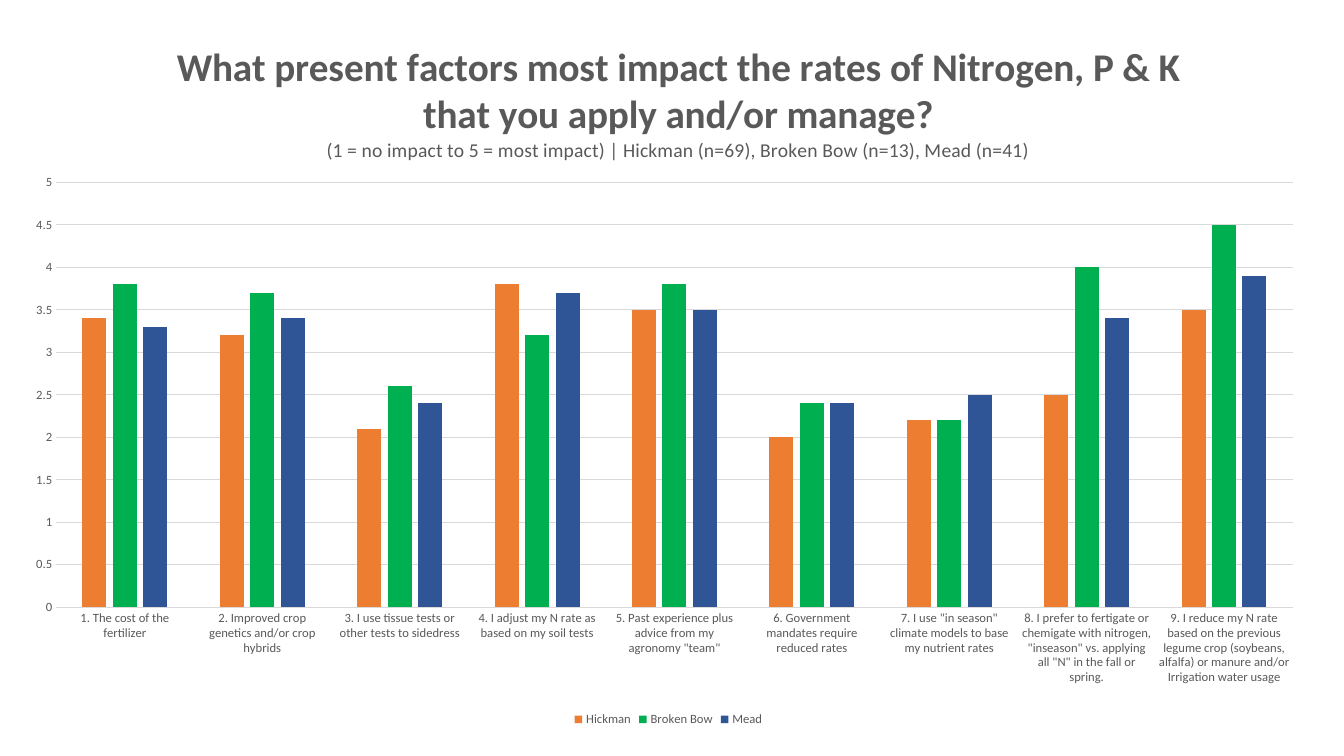
from lxml import etree
from pptx import Presentation
from pptx.chart.data import CategoryChartData
from pptx.dml.color import RGBColor
from pptx.enum.chart import XL_CHART_TYPE, XL_LEGEND_POSITION, XL_TICK_MARK
from pptx.oxml.ns import qn
from pptx.util import Inches, Pt

COLUMNS = XL_CHART_TYPE.COLUMN_CLUSTERED
BOTTOM = XL_LEGEND_POSITION.BOTTOM
NO_TICK = XL_TICK_MARK.NONE

COLORS = {
    "text": "595959",
    "grid": "D9D9D9",
    "Hickman": "ED7D31",
    "Broken Bow": "00B050",
    "Mead": "2F5597",
}

HEADING = "What present factors most impact the rates of Nitrogen, P & K that you apply and/or manage?"
SCALE_NOTE = "(1 = no impact to 5 = most impact) | Hickman (n=69), Broken Bow (n=13), Mead (n=41)"

FACTORS = [
    "1. The cost of the fertilizer",
    "2. Improved crop genetics and/or crop hybrids",
    "3. I use tissue tests or other tests to sidedress",
    "4. I adjust my N rate as based on my soil tests",
    '5. Past experience plus advice from my agronomy "team"',
    "6. Government mandates require reduced rates",
    '7. I use "in season" climate models to base my nutrient rates',
    '8. I prefer to fertigate or chemigate with nitrogen, "inseason" vs. applying all "N" in the fall or spring.',
    "9. I reduce my N rate based on the previous legume crop (soybeans, alfalfa) or manure and/or Irrigation water usage",
]
RATINGS = {
    "Hickman": (3.4, 3.2, 2.1, 3.8, 3.5, 2, 2.2, 2.5, 3.5),
    "Broken Bow": (3.8, 3.7, 2.6, 3.2, 3.8, 2.4, 2.2, 4, 4.5),
    "Mead": (3.3, 3.4, 2.4, 3.7, 3.5, 2.4, 2.5, 3.4, 3.9),
}


def place(parent, index, **settings):
    """Give a chart part a manual layout; index is where a new layout element goes."""
    layout = parent.find(qn("c:layout"))
    if layout is None:
        layout = etree.Element(qn("c:layout"))
        parent.insert(index, layout)
    manual = etree.SubElement(layout, qn("c:manualLayout"))
    for name, value in settings.items():
        etree.SubElement(manual, qn(f"c:{name}")).set("val", str(value))


class SurveyPage:
    font_name = "Calibri"

    def __init__(self, page):
        self.page = page

    def style_font(self, font, size, bold=False):
        font.name = self.font_name
        font.size = Pt(size)
        font.bold = bold
        font.color.rgb = RGBColor.from_string(COLORS["text"])

    def style_line(self, line):
        line.color.rgb = RGBColor.from_string(COLORS["grid"])
        line.width = Pt(0.75)

    def add_column_chart(self, categories, series, left, top, width, height):
        data = CategoryChartData()
        data.categories = categories
        for name, values in series.items():
            data.add_series(name, values)
        frame = self.page.shapes.add_chart(COLUMNS, left, top, width, height, data)
        chart = frame.chart
        self.style_font(chart.font, 9)
        plot = chart.plots[0]
        plot.gap_width, plot.overlap = 219, -27
        plot.vary_by_categories = False
        for columns in plot.series:
            columns.invert_if_negative = False
            columns.format.fill.solid()
            columns.format.fill.fore_color.rgb = RGBColor.from_string(COLORS[columns.name])
        plot_area = chart.plots[0]._element.getparent()
        place(plot_area, 0, layoutTarget="inner", xMode="edge", yMode="edge",
              x=0.042, y=0.223, w=0.925, h=0.602)
        return chart

    def style_axes(self, chart, maximum, step):
        for axis in (chart.category_axis, chart.value_axis):
            axis.major_tick_mark = axis.minor_tick_mark = NO_TICK
            self.style_font(axis.tick_labels.font, 9)
        self.style_line(chart.category_axis.format.line)
        values = chart.value_axis
        values.minimum_scale, values.maximum_scale = 0, maximum
        values.major_unit = step
        values.format.line.fill.background()
        values.has_major_gridlines = True
        self.style_line(values.major_gridlines.format.line)

    def add_legend(self, chart):
        chart.has_legend = True
        chart.legend.position = BOTTOM
        chart.legend.include_in_layout = False
        self.style_font(chart.legend.font, 9)

    def add_chart_title(self, chart, heading, note):
        chart.has_title = True
        title = chart.chart_title
        frame = title.text_frame
        lines = ((frame.paragraphs[0], heading, 28, True),
                 (frame.add_paragraph(), note, 14, False))
        for para, text, size, bold in lines:
            span = para.add_run()
            span.text = text
            self.style_font(para.font, size, bold)
            self.style_font(span.font, size, bold)
        place(title._element, 1, xMode="edge", yMode="edge", x=0.13, y=0.02)


def main():
    deck = Presentation()
    deck.slide_width, deck.slide_height = Inches(13.33), Inches(7.5)
    blank_layout = deck.slide_layouts[6]
    survey = SurveyPage(deck.slides.add_slide(blank_layout))
    chart = survey.add_column_chart(FACTORS, RATINGS, Inches(0), Inches(0.25),
                                    Inches(13.26), Inches(7))
    survey.style_axes(chart, maximum=5, step=0.5)
    survey.add_legend(chart)
    survey.add_chart_title(chart, HEADING, SCALE_NOTE)
    deck.save("out.pptx")


if __name__ == "__main__":
    main()
